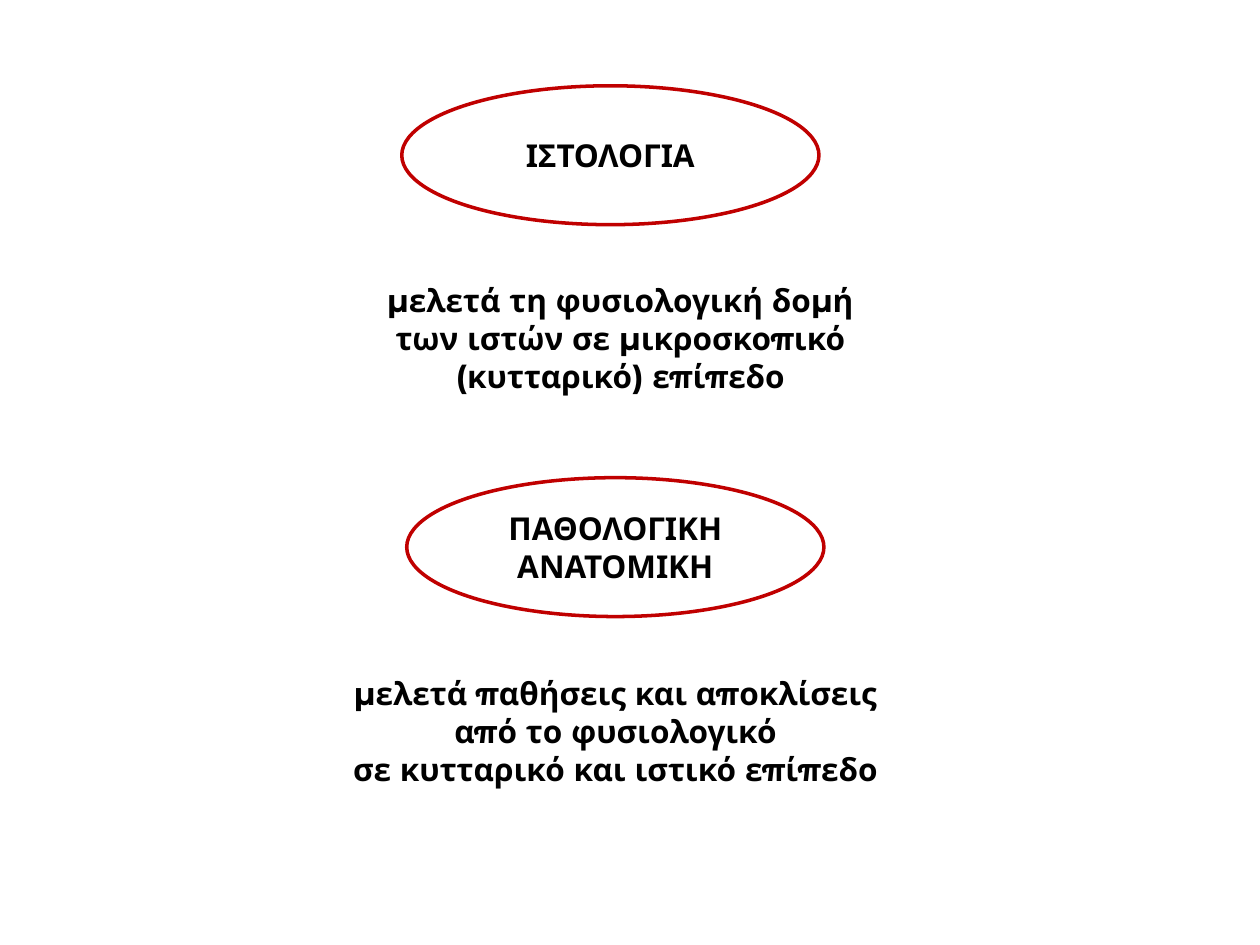
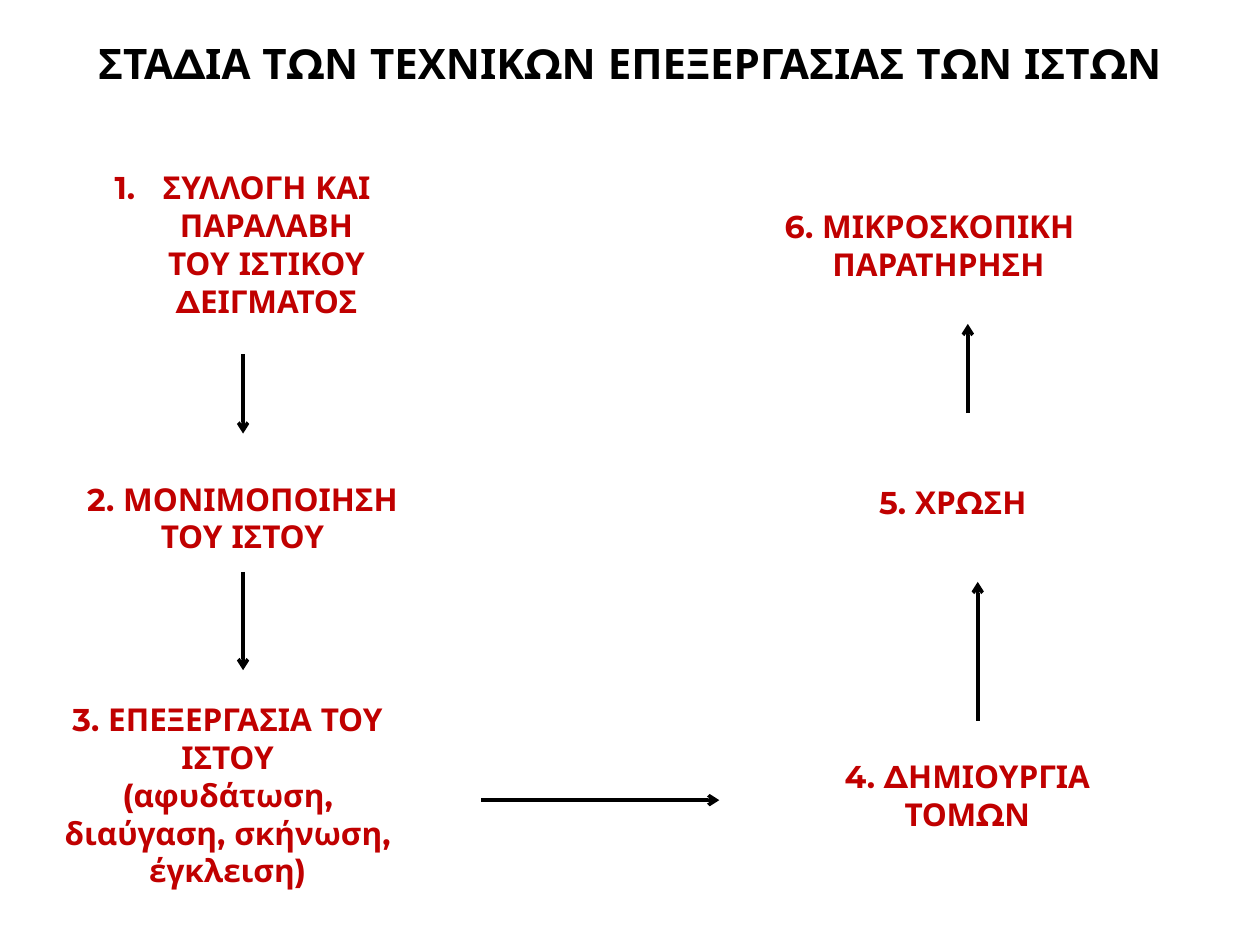
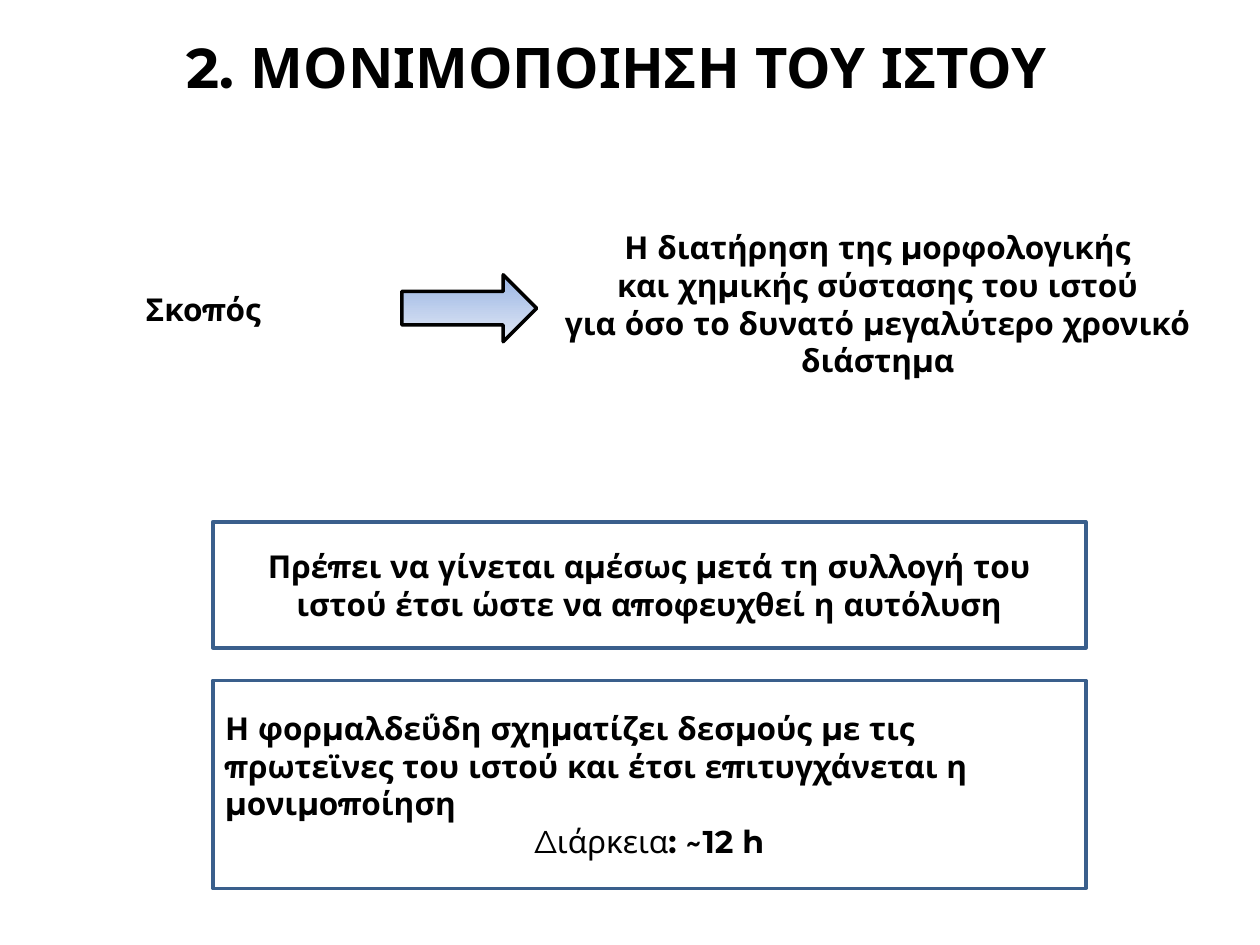
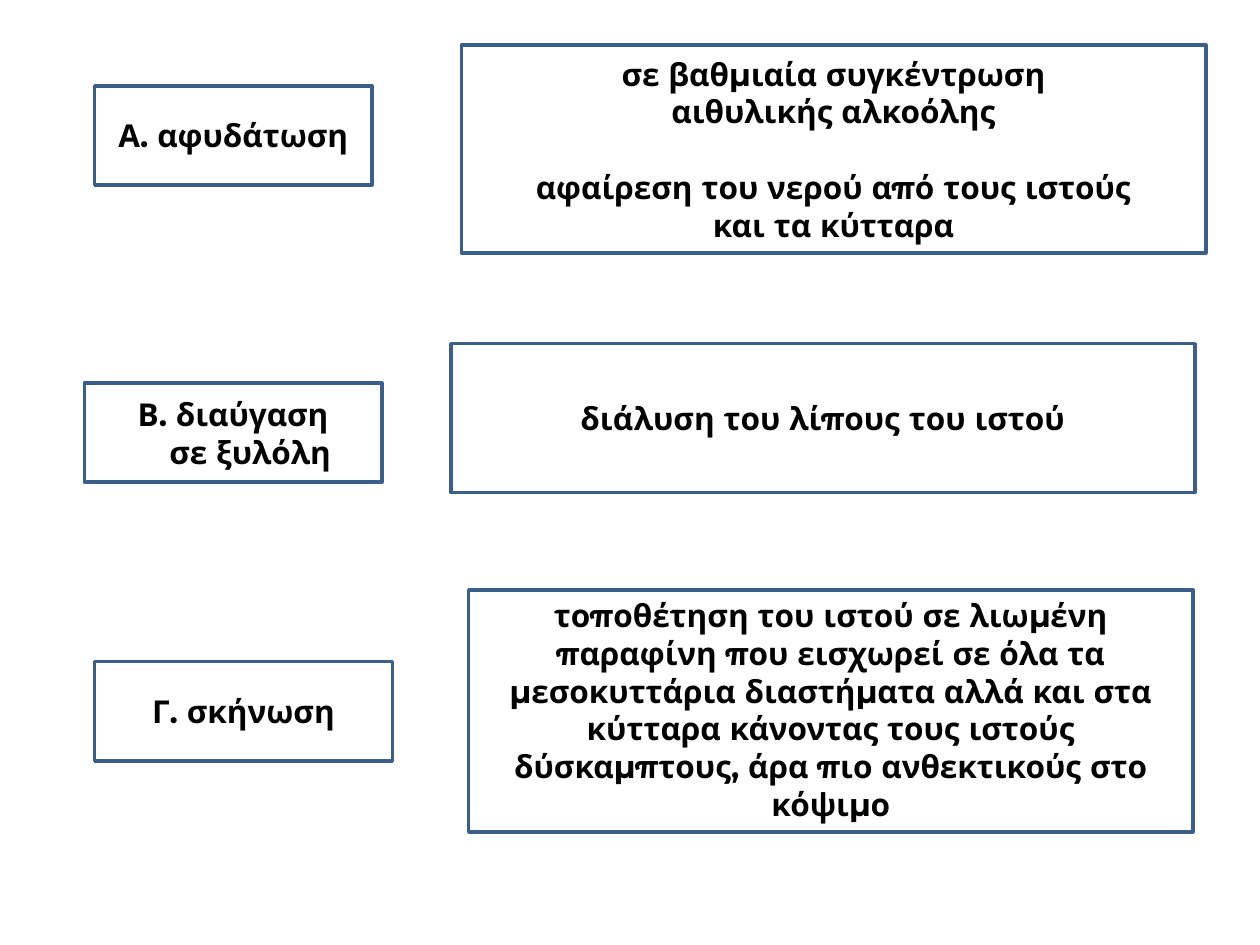
from lxml.etree import SubElement
from pptx import Presentation
from pptx.dml.color import RGBColor
from pptx.enum.shapes import MSO_CONNECTOR, MSO_SHAPE
from pptx.enum.text import MSO_ANCHOR, MSO_AUTO_SIZE, PP_ALIGN
from pptx.oxml.ns import qn
from pptx.util import Cm, Pt

BLACK, RED, BLUE = "000000", "C00000", "3A5F8C"
SKY, PALE = "9AB5E4", "E1E8F5"
FONT = "Montserrat"
TITLE_ONLY, BLANK = 5, 6


def rgb(value):
    return RGBColor.from_string(value)


def write(paragraph, text, *, size=18, color=BLACK, bold=True, align=PP_ALIGN.CENTER,
          left=0, right=0, first=0, before=0, numbered=False):
    paragraph.alignment = align
    properties = paragraph._p.get_or_add_pPr()
    for name, length in (("marL", left), ("marR", right), ("indent", first)):
        if length:
            properties.set(name, str(Cm(length)))
    if numbered:
        SubElement(properties, qn("a:buAutoNum"), type="arabicPeriod")
    if before:
        paragraph.space_before = Pt(before)
    run = paragraph.add_run()
    run.text = text
    run.font.name = FONT
    run.font.size = Pt(size)
    run.font.bold = bold
    run.font.color.rgb = rgb(color)


class Deck:
    def __init__(self):
        self.presentation = Presentation()
        self.presentation.slide_width = Cm(25.4)
        self.presentation.slide_height = Cm(19.05)
        self.slide = None

    def new_slide(self, layout=BLANK):
        self.slide = self.presentation.slides.add_slide(self.presentation.slide_layouts[layout])

    def fill_frame(self, frame, lines, anchor=MSO_ANCHOR.MIDDLE, wrap=True, **style):
        frame.word_wrap = wrap
        frame.auto_size = MSO_AUTO_SIZE.NONE
        frame.vertical_anchor = anchor
        for index, line in enumerate(lines):
            text, own = (line, {}) if isinstance(line, str) else line
            paragraph = frame.add_paragraph() if index else frame.paragraphs[0]
            write(paragraph, text, **{**style, **own})

    def title(self, area, text, **style):
        heading = self.slide.shapes.title
        heading.left, heading.top, heading.width, heading.height = map(Cm, area)
        self.fill_frame(heading.text_frame, [text], **style)

    def text(self, area, *lines, **style):
        box = self.slide.shapes.add_textbox(*map(Cm, area))
        self.fill_frame(box.text_frame, lines, **style)

    def shape(self, kind, area, *lines, outline=BLUE, gradient=None, **style):
        figure = self.slide.shapes.add_shape(kind, *map(Cm, area))
        figure.shadow.inherit = False
        figure.line.color.rgb = rgb(outline)
        figure.line.width = Pt(2)
        if gradient:
            figure.fill.gradient()
            figure.fill.gradient_angle = 270
            for stop, color in zip(figure.fill.gradient_stops, gradient):
                stop.color.rgb = rgb(color)
        else:
            figure.fill.background()
        self.fill_frame(figure.text_frame, lines, **style)
        return figure

    def oval(self, left, top, text):
        self.shape(MSO_SHAPE.OVAL, (left, top, 8.41, 2.8), text, outline=RED)

    def frame(self, area, *lines, **style):
        return self.shape(MSO_SHAPE.RECTANGLE, area, *lines, **style)

    def arrow(self, *ends):
        line = self.slide.shapes.add_connector(MSO_CONNECTOR.STRAIGHT, *map(Cm, ends))
        line.line.color.rgb = rgb(BLACK)
        line.line.width = Pt(2)
        SubElement(line.line._get_or_add_ln(), qn("a:tailEnd"), type="arrow")
        SubElement(line._element.spPr, qn("a:effectLst"))


def definitions(deck):
    deck.new_slide()
    deck.oval(8.1, 1.73, "ΙΣΤΟΛΟΓΙΑ")
    deck.text((6.91, 5.54, 11.2, 2.54),
              "μελετά τη φυσιολογική δομή των ιστών σε μικροσκοπικό (κυτταρικό) επίπεδο",
              left=0.2, right=0.2)
    deck.oval(8.2, 9.63, "ΠΑΘΟΛΟΓΙΚΗ ΑΝΑΤΟΜΙΚΗ")
    deck.text((6.71, 13.13, 11.4, 3.2),
              "μελετά παθήσεις και αποκλίσεις από το φυσιολογικό",
              "σε κυτταρικό και ιστικό επίπεδο")


def stages(deck):
    deck.new_slide(TITLE_ONLY)
    deck.title((0, 0, 25.4, 2.54), "ΣΤΑΔΙΑ ΤΩΝ ΤΕΧΝΙΚΩΝ ΕΠΕΞΕΡΓΑΣΙΑΣ ΤΩΝ ΙΣΤΩΝ", size=24)
    steps = [
        ((0.89, 2.92, 8, 3.99),
         ("ΣΥΛΛΟΓΗ ΚΑΙ ΠΑΡΑΛΑΒΗ", {"left": 0.97, "first": -0.97, "numbered": True}),
         ("ΤΟΥ ΙΣΤΙΚΟΥ ΔΕΙΓΜΑΤΟΣ", {"left": 0.97})),
        ((1.09, 9.53, 7.6, 1.8), "2. ΜΟΝΙΜΟΠΟΙΗΣΗ ΤΟΥ ΙΣΤΟΥ"),
        ((0.69, 13.72, 7.8, 4.6), "3. ΕΠΕΞΕΡΓΑΣΙΑ ΤΟΥ ΙΣΤΟΥ",
         "(αφυδάτωση, διαύγαση, σκήνωση, έγκλειση)"),
        ((15.7, 13.72, 7.6, 4.6), "4. ΔΗΜΙΟΥΡΓΙΑ ΤΟΜΩΝ"),
        ((16.31, 9.12, 5.8, 2), "5. ΧΡΩΣΗ"),
        ((15.49, 3.53, 7.6, 2.8),
         ("6. ΜΙΚΡΟΣΚΟΠΙΚΗ", {"right": 1.1}), ("ΠΑΡΑΤΗΡΗΣΗ", {"left": 0.36})),
    ]
    for area, *lines in steps:
        deck.text(area, *lines, color=RED)
    for ends in ((4.9, 7.14, 4.9, 8.74), (4.9, 11.53, 4.9, 13.51), (9.7, 16.13, 14.5, 16.13),
                 (19.51, 8.33, 19.51, 6.53), (19.71, 14.53, 19.71, 11.73)):
        deck.arrow(*ends)


def fixation(deck):
    deck.new_slide(TITLE_ONLY)
    deck.title((2.49, 0.53, 19.89, 1.63), "2. ΜΟΝΙΜΟΠΟΙΗΣΗ ΤΟΥ ΙΣΤΟΥ",
               size=32, anchor=MSO_ANCHOR.TOP, wrap=False)
    deck.text((1.7, 5.13, 4.8, 2.21), "Σκοπός")
    deck.text((10.9, 4.52, 13.59, 3.2), "Η διατήρηση της μορφολογικής",
              "και χημικής σύστασης του ιστού",
              "για όσο το δυνατό μεγαλύτερο χρονικό διάστημα")
    deck.shape(MSO_SHAPE.RIGHT_ARROW, (8.1, 5.54, 2.72, 1.35),
               outline=BLACK, gradient=(SKY, PALE))
    deck.frame((4.29, 10.52, 17.6, 2.54),
               "Πρέπει να γίνεται αμέσως μετά τη συλλογή του ιστού έτσι ώστε να αποφευχθεί η αυτόλυση")
    formaldehyde = deck.frame(
        (4.29, 13.72, 17.6, 4.19),
        ("Η φορμαλδεΰδη σχηματίζει δεσμούς με τις πρωτεϊνες του ιστού και έτσι "
         "επιτυγχάνεται η μονιμοποίηση", {"align": PP_ALIGN.LEFT}),
        ("Διάρκεια", {"bold": False}))
    write(formaldehyde.text_frame.paragraphs[-1], ":  ̴ 12 h")


def processing(deck):
    deck.new_slide()
    deck.frame((1.91, 1.73, 5.59, 2), "Α. αφυδάτωση")
    deck.frame((9.3, 0.91, 15.01, 4.19), "σε βαθμιαία συγκέντρωση", "αιθυλικής αλκοόλης",
               ("αφαίρεση του νερού από τους ιστούς", {"before": 21.6}), "και τα κύτταρα")
    deck.frame((1.7, 7.72, 6, 2), "Β. διαύγαση", ("σε ξυλόλη", {"left": 0.69}))
    deck.frame((9.09, 6.93, 15, 3), "διάλυση του λίπους του ιστού")
    deck.frame((1.91, 13.34, 6, 2), "Γ. σκήνωση")
    deck.frame((9.45, 11.89, 14.6, 4.88),
               "τοποθέτηση του ιστού σε λιωμένη παραφίνη που εισχωρεί σε όλα τα μεσοκυττάρια "
               "διαστήματα αλλά και στα κύτταρα κάνοντας τους ιστούς δύσκαμπτους, άρα πιο "
               "ανθεκτικούς στο κόψιμο", anchor=MSO_ANCHOR.TOP)


def main():
    deck = Deck()
    for build in (definitions, stages, fixation, processing):
        build(deck)
    deck.presentation.save("out.pptx")


if __name__ == "__main__":
    main()
